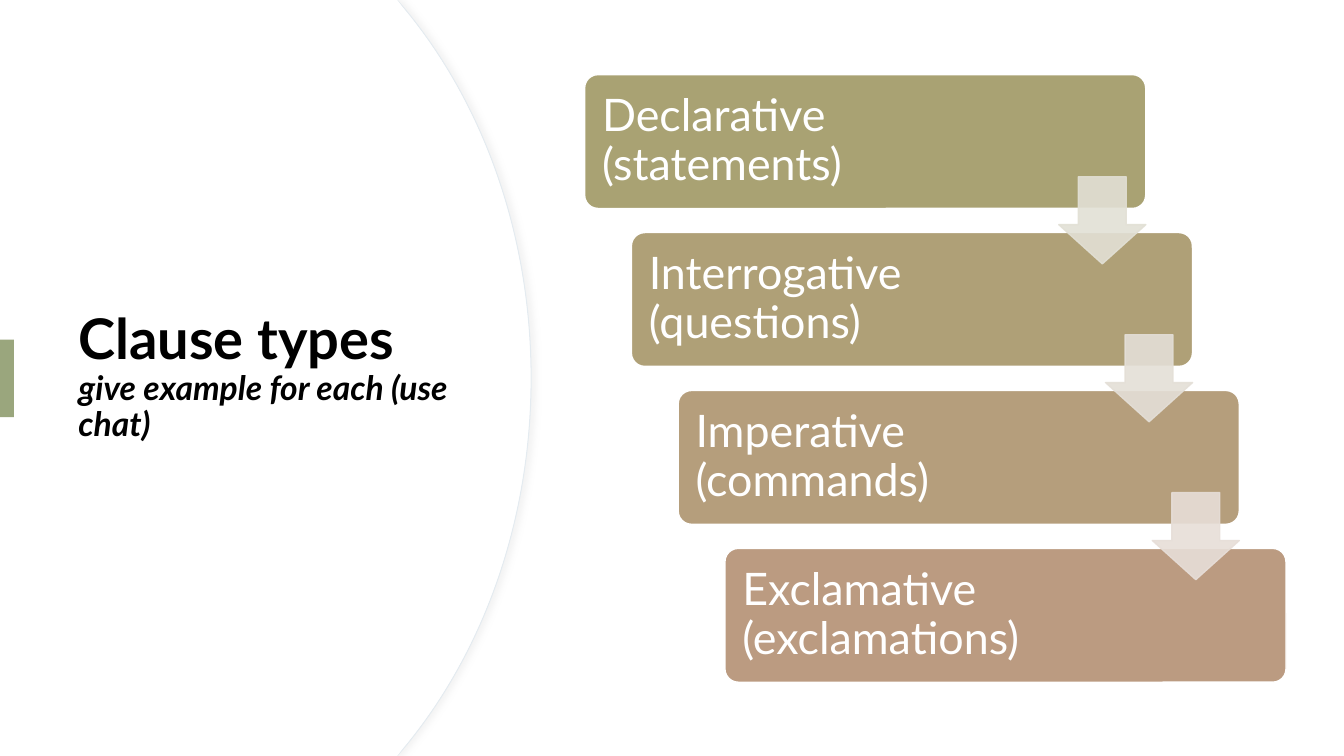
from dataclasses import dataclass

from lxml import etree
from pptx import Presentation
from pptx.dml.color import RGBColor
from pptx.enum.shapes import MSO_SHAPE
from pptx.enum.text import MSO_ANCHOR
from pptx.oxml.ns import qn
from pptx.shapes.autoshape import Shape
from pptx.slide import Slide
from pptx.util import Pt

RECTANGLE = MSO_SHAPE.RECTANGLE
ROUNDED = MSO_SHAPE.ROUNDED_RECTANGLE
DOWN_ARROW = MSO_SHAPE.DOWN_ARROW
MIDDLE = MSO_ANCHOR.MIDDLE

SLIDE_WIDTH, SLIDE_HEIGHT = 960, 540
FONT = "Lato"
COLORS = {
    "white": "FFFFFF",
    "black": "000000",
    "panel_line": "E4EBF0",
    "panel_shadow": "D9D9D9",
    "accent": "9AA67D",
}

STEP_LEFT, STEP_TOP = 417.6, 53.3
STEP_WIDTH, STEP_HEIGHT = 400.8, 95.6
SHIFT_X, SHIFT_Y = 33.4, 112.8
LABEL_INSET = 2.8
ARROW_X, ARROW_Y, ARROW_SIZE = 338.7, 73, 62.2


@dataclass(frozen=True)
class ClauseStep:
    text: str
    fill: str
    arrow: str | None = None
    label_width: float = 300


STEPS = [
    ClauseStep("Declarative (statements)", "A9A273", "E2E0D5", 289.5),
    ClauseStep("Interrogative (questions)", "AFA077", "E4DFD7"),
    ClauseStep("Imperative (commands)", "B59E7C", "E7DED8"),
    ClauseStep("Exclamative (exclamations)", "BB9B81"),
]


def style(shape: Shape, fill: str, line: str | None = None, width: float = 1) -> None:
    """Set a flat fill and an optional outline, without a shadow."""
    shape.shadow.inherit = False
    shape.fill.solid()
    shape.fill.fore_color.rgb = RGBColor.from_string(fill)
    if line is None:
        shape.line.fill.background()
    else:
        shape.line.color.rgb = RGBColor.from_string(line)
        shape.line.width = Pt(width)


def add_block(slide: Slide, kind: MSO_SHAPE, left: float, top: float,
              width: float, height: float) -> Shape:
    return slide.shapes.add_shape(kind, Pt(left), Pt(top), Pt(width), Pt(height))


def add_text_box(slide: Slide, left: float, top: float, width: float,
                 height: float, color: str) -> Shape:
    """Add a wrapping, vertically centred text box with one styled paragraph."""
    shape = slide.shapes.add_textbox(Pt(left), Pt(top), Pt(width), Pt(height))
    shape.text_frame.word_wrap = True
    shape.text_frame.vertical_anchor = MIDDLE
    paragraph = shape.text_frame.paragraphs[0]
    paragraph.line_spacing = 0.9
    paragraph.font.name = FONT
    paragraph.font.color.rgb = RGBColor.from_string(color)
    return shape


def set_opacity(shape: Shape, percent: int) -> None:
    for color in shape.element.spPr.iter(qn("a:srgbClr")):
        etree.SubElement(color, qn("a:alpha"), val=str(percent * 1000))


def add_soft_shadow(shape: Shape) -> None:
    effects = shape.element.spPr.find(qn("a:effectLst"))
    shadow = etree.SubElement(effects, qn("a:outerShdw"), blurRad=str(Pt(4)),
                              dist=str(Pt(3)), dir="0", algn="tl", rotWithShape="0")
    color = etree.SubElement(shadow, qn("a:srgbClr"), val=COLORS["panel_shadow"])
    etree.SubElement(color, qn("a:alpha"), val="30000")


def bend(segment: etree._Element, controls: list[tuple[float, float]]) -> None:
    """Turn a straight path segment into a cubic curve with two control points."""
    curve = etree.Element(qn("a:cubicBezTo"))
    for x, y in controls:
        etree.SubElement(curve, qn("a:pt"), x=str(Pt(x)), y=str(Pt(y)))
    segment.getparent().replace(segment, curve)
    curve.append(segment[0])


def add_curved_panel(slide: Slide, right: float) -> Shape:
    """Add a full-height panel whose right side bulges out to the given x."""
    edge, shoulder = 283.7, right - 90.7
    outline = [(edge, 0), (shoulder, 5.8), (right, 270),
               (shoulder, SLIDE_HEIGHT - 5.8), (edge, SLIDE_HEIGHT), (0, SLIDE_HEIGHT)]
    builder = slide.shapes.build_freeform(0, 0)
    builder.add_line_segments([(Pt(x), Pt(y)) for x, y in outline], close=True)
    panel = builder.convert_to_shape()

    controls = [(right - 34.5, 73.4), (right, 167)]
    mirrored = [(x, SLIDE_HEIGHT - y) for x, y in reversed(controls)]
    segments = list(panel.element.spPr.iter(qn("a:lnTo")))
    bend(segments[2], controls)
    bend(segments[3], mirrored)
    return panel


def add_title(slide: Slide) -> None:
    shape = add_text_box(slide, 49, 91.4, 283.7, 356.4, COLORS["black"])
    paragraph = shape.text_frame.paragraphs[0]
    paragraph.font.bold = True
    heading = paragraph.add_run()
    heading.text = "Clause types"
    heading.font.size = Pt(40)
    paragraph.add_line_break()
    prompt = paragraph.add_run()
    prompt.text = "give example for each (use chat)"
    prompt.font.size = Pt(24)
    prompt.font.italic = True


def add_step(slide: Slide, step: ClauseStep, left: float, top: float) -> None:
    block = add_block(slide, ROUNDED, left, top, STEP_WIDTH, STEP_HEIGHT)
    block.adjustments[0] = 0.1
    style(block, step.fill, COLORS["white"])

    label = add_text_box(slide, left + LABEL_INSET, top + LABEL_INSET, step.label_width,
                         STEP_HEIGHT - 2 * LABEL_INSET, COLORS["white"])
    frame = label.text_frame
    frame.margin_left = frame.margin_right = Pt(9.6)
    frame.margin_top = frame.margin_bottom = Pt(9.6)
    paragraph = frame.paragraphs[0]
    paragraph.font.size = Pt(32)
    paragraph.add_run().text = step.text


def add_arrow(slide: Slide, color: str, left: float, top: float) -> None:
    arrow = add_block(slide, DOWN_ARROW, left, top, ARROW_SIZE, ARROW_SIZE)
    arrow.adjustments[0] = 0.55
    arrow.adjustments[1] = 0.45
    style(arrow, color, color)
    set_opacity(arrow, 90)


def main() -> None:
    presentation = Presentation()
    presentation.slide_width = Pt(SLIDE_WIDTH)
    presentation.slide_height = Pt(SLIDE_HEIGHT)
    slide = presentation.slides.add_slide(presentation.slide_layouts[6])

    background = add_block(slide, RECTANGLE, 0, 0, SLIDE_WIDTH, SLIDE_HEIGHT)
    style(background, COLORS["white"])
    outer_panel = add_curved_panel(slide, 379.4)
    style(outer_panel, COLORS["white"], COLORS["panel_line"], 0.75)
    add_soft_shadow(outer_panel)
    style(add_curved_panel(slide, 378.7), COLORS["white"])

    add_title(slide)
    style(add_block(slide, RECTANGLE, 0, 242.6, 10, 55.4), COLORS["accent"])

    corners = [(STEP_LEFT + index * SHIFT_X, STEP_TOP + index * SHIFT_Y)
               for index in range(len(STEPS))]
    for step, (left, top) in zip(STEPS, corners):
        add_step(slide, step, left, top)
    for step, (left, top) in zip(STEPS, corners):
        if step.arrow:
            add_arrow(slide, step.arrow, left + ARROW_X, top + ARROW_Y)

    presentation.save("out.pptx")


if __name__ == "__main__":
    main()
